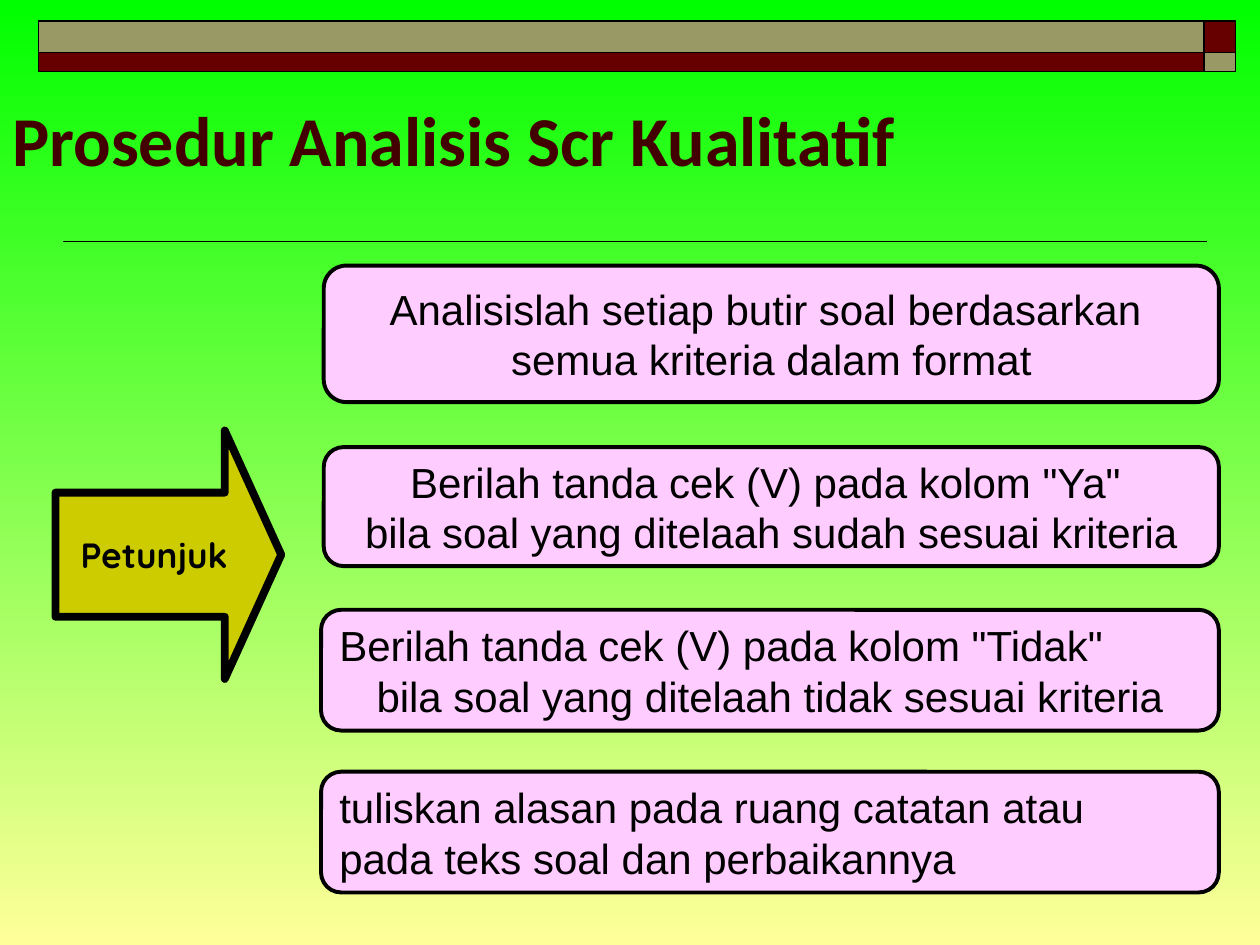
"""Build the slide on qualitative analysis instructions."""
from dataclasses import dataclass

from lxml.etree import SubElement
from pptx import Presentation
from pptx.dml.color import RGBColor
from pptx.enum.shapes import MSO_CONNECTOR, MSO_SHAPE
from pptx.enum.text import MSO_ANCHOR, PP_ALIGN
from pptx.oxml.ns import qn
from pptx.util import Pt


@dataclass(frozen=True)
class Theme:
    green: str = "00FF00"
    yellow: str = "FFFF99"
    maroon: str = "660000"
    khaki: str = "999966"
    title: str = "420000"
    gold: str = "CCCC00"
    pink: str = "FFCCFF"
    black: str = "000000"
    title_size: int = 40
    arrow_size: int = 20
    body_size: int = 24


theme = Theme()
rgb = RGBColor.from_string


def add_block(kind, x, y, w, h, fill, line_width):
    sp = s.shapes.add_shape(kind, Pt(x), Pt(y), Pt(w), Pt(h))
    sp.shadow.inherit = False
    sp.fill.solid()
    sp.fill.fore_color.rgb = rgb(fill)
    sp.line.color.rgb = rgb(theme.black)
    sp.line.width = Pt(line_width)
    return sp


def write(p, text, font, size, color, align, bold=False):
    p.text = text
    p.alignment = align
    p.font.name = font
    p.font.size = Pt(size)
    p.font.bold = bold
    p.font.color.rgb = rgb(color)


prs = Presentation()
prs.slide_width, prs.slide_height = Pt(720), Pt(540)
s = prs.slides.add_slide(prs.slide_layouts[6])

bg = s.background.fill
bg.gradient()
bg.gradient_angle = 270
for stop, color in zip(bg.gradient_stops, (theme.green, theme.yellow)):
    stop.color.rgb = rgb(color)
    stop.position = 0 if color == theme.green else 1

rule = s.shapes.add_connector(MSO_CONNECTOR.STRAIGHT, Pt(36), Pt(138), Pt(690), Pt(138))
rule.line.color.rgb = rgb(theme.black)
rule.line.width = Pt(1)
SubElement(rule._element.spPr, qn("a:effectLst"))

bands = [(12, 18, theme.khaki, theme.maroon), (30, 11, theme.maroon, theme.khaki)]
for y, h, bar, corner in bands:
    add_block(MSO_SHAPE.RECTANGLE, 22, y, 666, h, bar, 1)
    add_block(MSO_SHAPE.RECTANGLE, 688, y, 18, h, corner, 1)

tf = s.shapes.add_textbox(Pt(0), Pt(46), Pt(720), Pt(61)).text_frame
tf.word_wrap = True
tf.vertical_anchor = MSO_ANCHOR.BOTTOM
p = tf.paragraphs[0]
write(p, "Prosedur Analisis Scr Kualitatif", "Calibri", theme.title_size,
      theme.title, PP_ALIGN.LEFT, True)
p.line_spacing = 0.85

arrow = add_block(MSO_SHAPE.RIGHT_ARROW, 31.7, 246, 129, 142, theme.gold, 4.5)
arrow.adjustments[0], arrow.adjustments[1] = 0.5, 0.25
tf = arrow.text_frame
tf.word_wrap = False
tf.vertical_anchor = MSO_ANCHOR.MIDDLE
write(tf.paragraphs[0], "Petunjuk", "Quicksand", theme.arrow_size,
      theme.black, PP_ALIGN.CENTER, True)

left, center = PP_ALIGN.LEFT, PP_ALIGN.CENTER
steps = [
    (185, 151.8, 511.5, 78, [("Analisislah setiap butir soal berdasarkan ", center),
                             ("semua kriteria dalam format", center)]),
    (185, 255.5, 511.5, 68, [('Berilah tanda cek (V) pada kolom "Ya" ', center),
                             ("bila soal yang ditelaah sudah sesuai kriteria", center)]),
    (183.5, 348.5, 513, 69, [('Berilah tanda cek (V) pada kolom "Tidak"', left),
                             ("bila soal yang ditelaah tidak sesuai kriteria", center)]),
    (183.5, 441, 513, 69, [("tuliskan alasan pada ruang catatan atau", left),
                           ("pada teks soal dan perbaikannya", left)]),
]
for x, y, w, h, lines in steps:
    sp = add_block(MSO_SHAPE.ROUNDED_RECTANGLE, x, y, w, h, theme.pink, 2.25)
    tf = sp.text_frame
    tf.word_wrap = True
    tf.vertical_anchor = MSO_ANCHOR.MIDDLE
    for i, (text, align) in enumerate(lines):
        p = tf.add_paragraph() if i else tf.paragraphs[0]
        write(p, text, "Arial", theme.body_size, theme.black, align)

prs.save("out.pptx")
